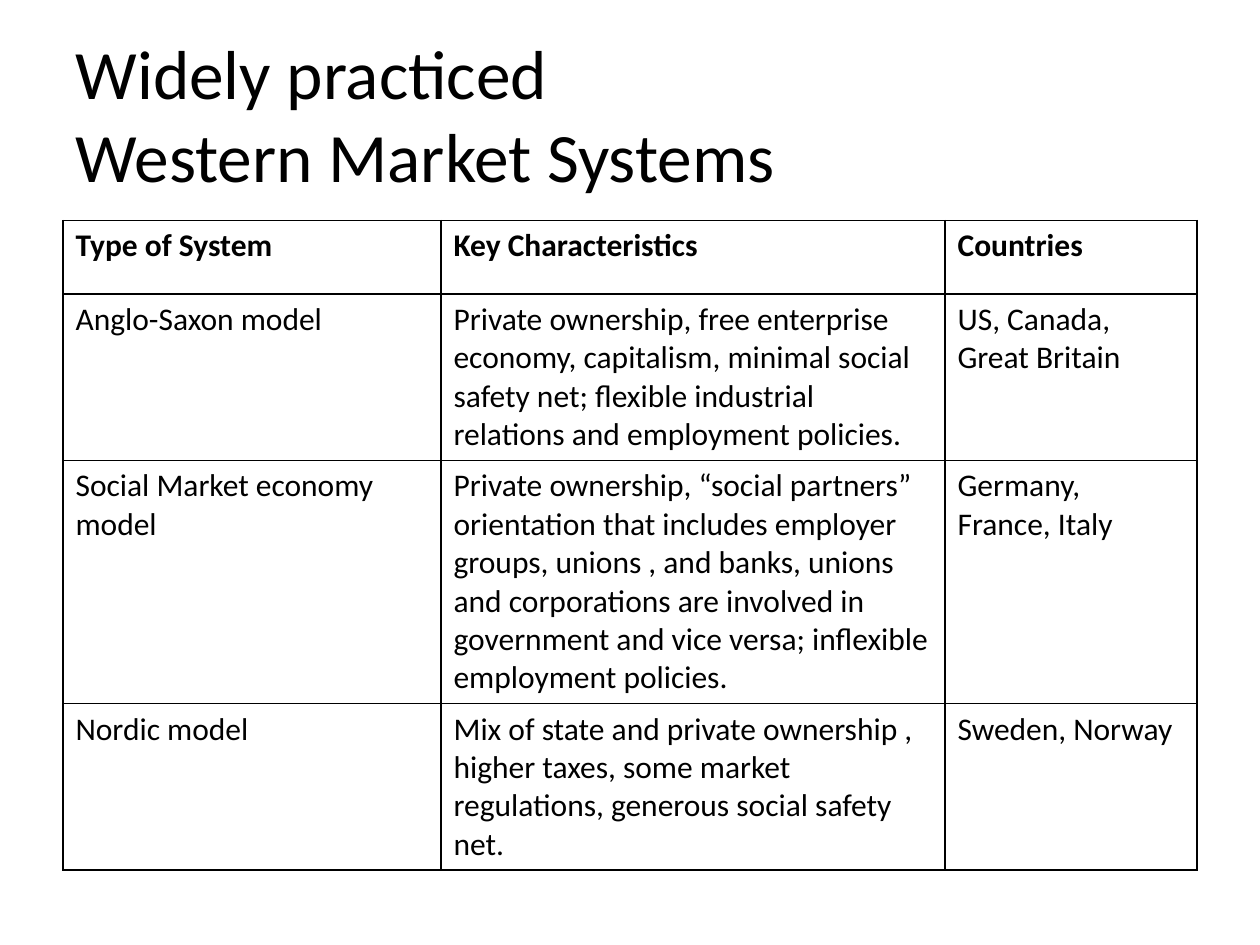
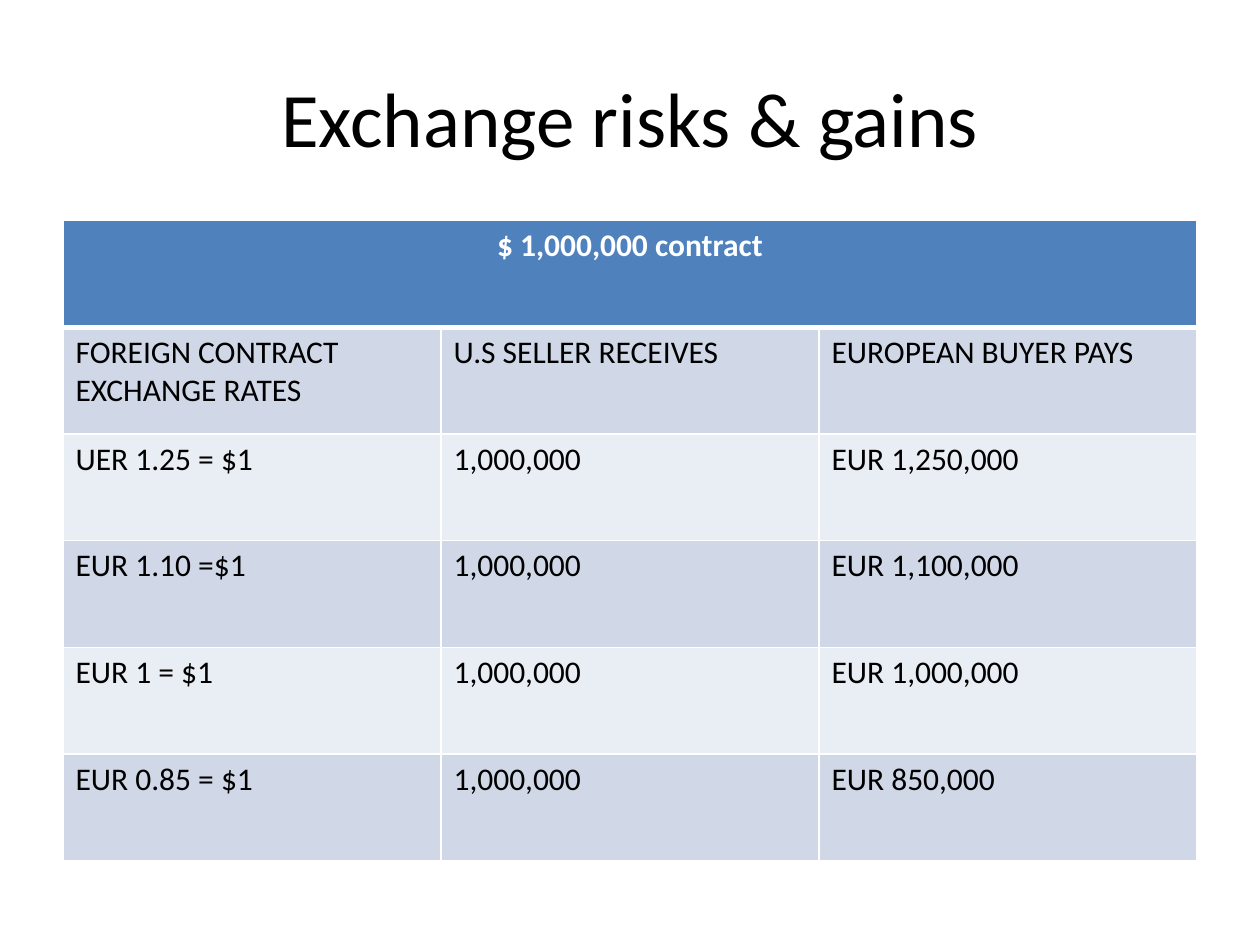
from lxml.etree import SubElement
from pptx import Presentation
from pptx.dml.color import RGBColor
from pptx.enum.text import MSO_ANCHOR, MSO_AUTO_SIZE, PP_ALIGN
from pptx.oxml.ns import qn
from pptx.util import Pt

FONT = "Calibri"
BLACK, WHITE = "000000", "FFFFFF"
HEADER_BLUE, BAND_DARK, BAND_LIGHT = "4F81BD", "D0D8E8", "E9EDF4"
LEFT, WIDTH, TITLE_TOP, TABLE_TOP = 36, 648, 21.6, 126
TITLE_ONLY_LAYOUT = 5

MARKET_SYSTEMS = [
    ["Type of System", "Key Characteristics", "Countries"],
    ["Anglo-Saxon model",
     "Private ownership, free enterprise economy, capitalism, minimal social "
     "safety net; flexible industrial relations and employment policies.",
     "US, Canada,\vGreat Britain"],
    ["Social Market economy model",
     "Private ownership, “social partners” orientation that includes employer "
     "groups, unions , and banks, unions and corporations are involved in "
     "government and vice versa; inflexible employment policies.",
     "Germany,\vFrance, Italy"],
    ["Nordic model",
     "Mix of state and private ownership , higher taxes, some market "
     "regulations, generous social safety net.",
     "Sweden, Norway"],
]

SELLER_RECEIVES = "1,000,000"
EXCHANGE_RATES = [
    ["$ 1,000,000 contract", "", ""],
    ["FOREIGN CONTRACT EXCHANGE RATES", "U.S SELLER RECEIVES", "EUROPEAN BUYER PAYS"],
    ["UER 1.25 = $1", SELLER_RECEIVES, "EUR 1,250,000"],
    ["EUR 1.10 =$1", SELLER_RECEIVES, "EUR 1,100,000"],
    ["EUR 1 = $1", SELLER_RECEIVES, "EUR 1,000,000"],
    ["EUR 0.85 = $1", SELLER_RECEIVES, "EUR 850,000"],
]


def color(hex_value):
    return RGBColor.from_string(hex_value)


def format_paragraph(paragraph, font_color, alignment, **font_values):
    paragraph.alignment = alignment
    for name, value in {"name": FONT, **font_values}.items():
        setattr(paragraph.font, name, value)
    paragraph.font.color.rgb = color(font_color)


def add_titled_slide(presentation, text, height, size, alignment):
    slide = presentation.slides.add_slide(presentation.slide_layouts[TITLE_ONLY_LAYOUT])
    title = slide.shapes.title
    place = {"left": LEFT, "top": TITLE_TOP, "width": WIDTH, "height": height}
    for name, value in place.items():
        setattr(title, name, Pt(value))
    frame = title.text_frame
    frame.text = text
    frame.auto_size = MSO_AUTO_SIZE.NONE
    frame.vertical_anchor = MSO_ANCHOR.MIDDLE
    format_paragraph(frame.paragraphs[0], BLACK, alignment, size=Pt(size))
    return slide


def set_borders(cell, border_color, top=1, bottom=1):
    properties = cell._tc.get_or_add_tcPr()
    widths = {"a:lnL": 1, "a:lnR": 1, "a:lnT": top, "a:lnB": bottom}
    for tag, width in widths.items():
        line = SubElement(properties, qn(tag), w=str(Pt(width)))
        fill = SubElement(line, qn("a:solidFill"))
        SubElement(fill, qn("a:srgbClr"), val=border_color)


def fill_cell(cell, fill_color):
    if fill_color is None:
        cell.fill.background()
    else:
        cell.fill.solid()
        cell.fill.fore_color.rgb = color(fill_color)


def add_data_table(slide, rows, column_widths, row_heights, border_color, fills,
                   header_color=BLACK, header_alignment=PP_ALIGN.LEFT, header_line=1):
    table = slide.shapes.add_table(
        len(rows), len(column_widths), Pt(LEFT), Pt(TABLE_TOP),
        Pt(WIDTH), Pt(sum(row_heights))).table
    table.horz_banding = False
    for column, width in zip(table.columns, column_widths):
        column.width = Pt(width)
    for row_index, texts in enumerate(rows):
        table.rows[row_index].height = Pt(row_heights[row_index])
        is_header = row_index == 0
        for column_index, text in enumerate(texts):
            cell = table.cell(row_index, column_index)
            set_borders(cell, border_color,
                        top=header_line if row_index == 1 else 1,
                        bottom=header_line if is_header else 1)
            fill_cell(cell, fills[row_index])
            cell.text_frame.text = text
            format_paragraph(
                cell.text_frame.paragraphs[0],
                header_color if is_header else BLACK,
                header_alignment if is_header else PP_ALIGN.LEFT,
                size=Pt(18), bold=is_header)
    return table


def add_market_systems(presentation):
    slide = add_titled_slide(presentation, "Widely practiced\vWestern Market Systems",
                             86.4, 39.6, PP_ALIGN.LEFT)
    add_data_table(slide, MARKET_SYSTEMS, [216, 288, 144], [42, 95, 139, 95],
                   BLACK, [None] * len(MARKET_SYSTEMS))


def add_exchange_risks(presentation):
    slide = add_titled_slide(presentation, "Exchange risks & gains",
                             90, 44, PP_ALIGN.CENTER)
    row_count = len(EXCHANGE_RATES)
    bands = [BAND_LIGHT if row % 2 == 0 else BAND_DARK for row in range(1, row_count)]
    table = add_data_table(slide, EXCHANGE_RATES, [WIDTH / 3] * 3, [61] * row_count,
                           WHITE, [HEADER_BLUE] + bands, header_color=WHITE,
                           header_alignment=PP_ALIGN.CENTER, header_line=3)
    table.cell(0, 0).merge(table.cell(0, 2))


def main():
    presentation = Presentation()
    presentation.slide_width, presentation.slide_height = Pt(720), Pt(540)
    add_market_systems(presentation)
    add_exchange_risks(presentation)
    presentation.save("out.pptx")


if __name__ == "__main__":
    main()
